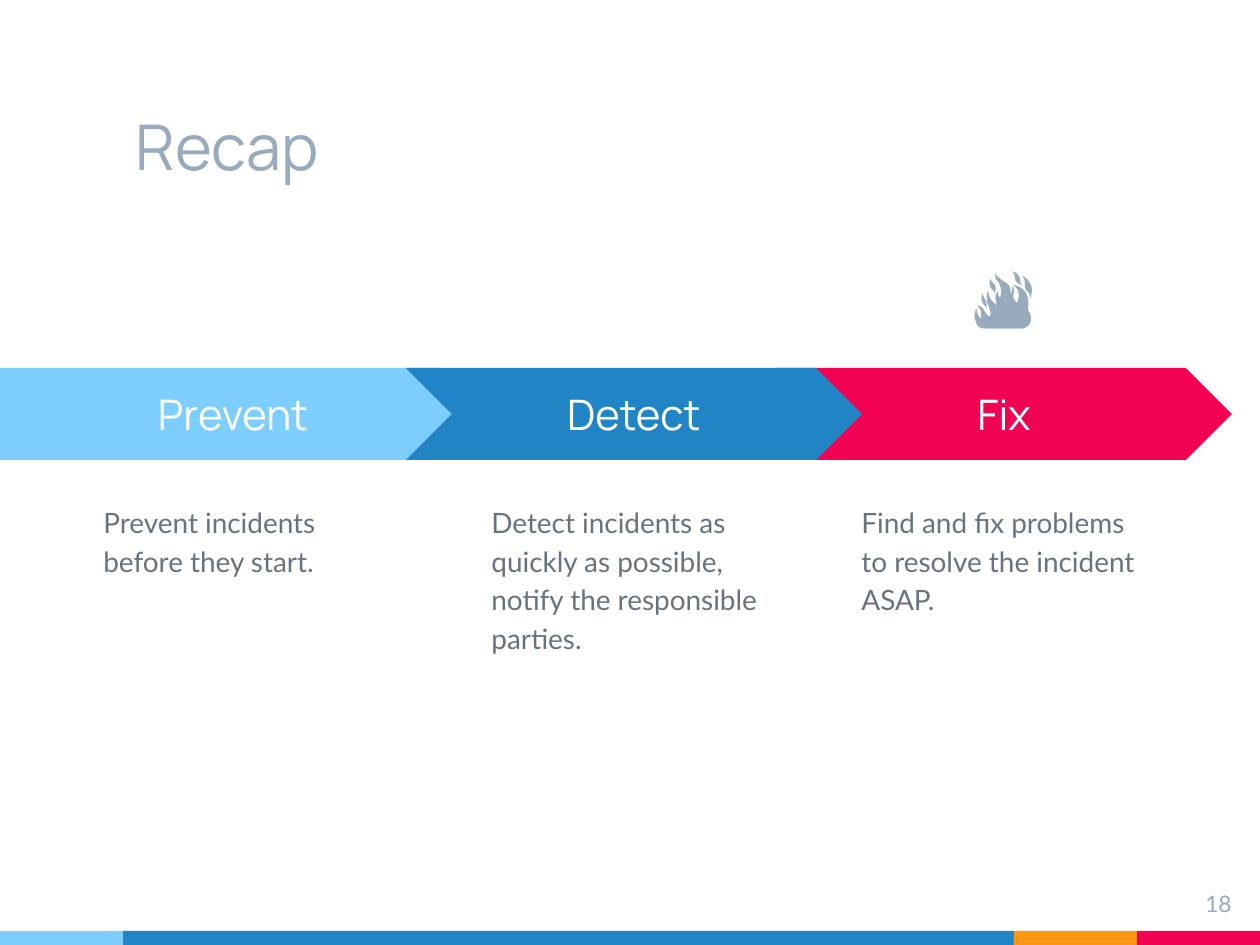
from pptx import Presentation
from pptx import util as u
from pptx.dml import color
from pptx.enum import shapes, text

PX_PER_INCH = 126
SKY, BLUE, ORANGE, RED = "7ECEFD", "2185C5", "FF9715", "F20253"
MIST, SLATE, WHITE = "97ABBC", "677480", "FFFFFF"
HEADING, BODY = "Manrope", "Lato"
LEFT, CENTER, RIGHT = text.PP_ALIGN.LEFT, text.PP_ALIGN.CENTER, text.PP_ALIGN.RIGHT
TOP, MIDDLE, BOTTOM = text.MSO_ANCHOR.TOP, text.MSO_ANCHOR.MIDDLE, text.MSO_ANCHOR.BOTTOM
BAND = shapes.MSO_SHAPE.RECTANGLE
PENTAGON, CHEVRON = shapes.MSO_SHAPE.PENTAGON, shapes.MSO_SHAPE.CHEVRON


def px(length):
    return u.Emu(length * 914400 // PX_PER_INCH)


def rgb(hex_code):
    return color.RGBColor.from_string(hex_code)


def write(shape, words, size, font, ink, align=LEFT, anchor=TOP, spacing=None):
    frame = shape.text_frame
    frame.word_wrap = True
    frame.vertical_anchor = anchor
    frame.margin_left = frame.margin_right = u.Inches(0.1)
    frame.margin_top = frame.margin_bottom = u.Inches(0.1)
    paragraph = frame.paragraphs[0]
    paragraph.alignment = align
    paragraph.line_spacing = spacing
    run = paragraph.add_run()
    run.text = words
    run.font.size = u.Pt(size)
    run.font.name = font
    run.font.color.rgb = rgb(ink)


def add_label(slide, box, words, size, font, ink, **layout):
    label = slide.shapes.add_textbox(*map(px, box))
    write(label, words, size, font, ink, **layout)


def add_block(slide, kind, box, fill):
    block = slide.shapes.add_shape(kind, *map(px, box))
    block.shadow.inherit = False
    block.fill.solid()
    block.fill.fore_color.rgb = rgb(fill)
    block.line.fill.background()
    return block


def add_step(slide, kind, left, width, fill, name, note_left, note):
    arrow = add_block(slide, kind, (left, 368, width, 92), fill)
    arrow.adjustments[0] = 0.5
    write(arrow, name, 24, HEADING, WHITE, align=CENTER, anchor=MIDDLE)
    add_label(slide, (note_left, 488, 309, 360), note, 16, BODY, SLATE, spacing=1.15)


def main():
    deck = Presentation()
    deck.slide_width, deck.slide_height = px(1260), px(945)
    slide = deck.slides.add_slide(deck.slide_layouts[6])

    # Colour strip along the bottom edge
    left = 0
    for width, fill in [(123, SKY), (891, BLUE), (123, ORANGE), (123, RED)]:
        add_block(slide, BAND, (left, 931, width, 14), fill)
        left += width

    # Title
    add_label(slide, (123, 38, 891, 158), "Recap", 36, HEADING, MIST, anchor=BOTTOM)

    # Process steps; Detect comes last so that it overlaps both neighbours
    add_step(slide, CHEVRON, 776, 456, RED, "Fix", 849,
             "Find and fix problems to resolve the incident ASAP.")
    add_step(slide, PENTAGON, 0, 489, SKY, "Prevent", 91,
             "Prevent incidents before they start.")
    add_step(slide, CHEVRON, 406, 456, BLUE, "Detect", 479,
             "Detect incidents as quickly as possible, notify the responsible parties.")

    # Page number and fire symbol
    add_label(slide, (1168, 877, 76, 58), "18", 13, BODY, MIST, align=RIGHT)
    add_label(slide, (960, 243, 88, 102), "🔥", 36, HEADING, MIST)

    deck.save("out.pptx")


if __name__ == "__main__":
    main()
